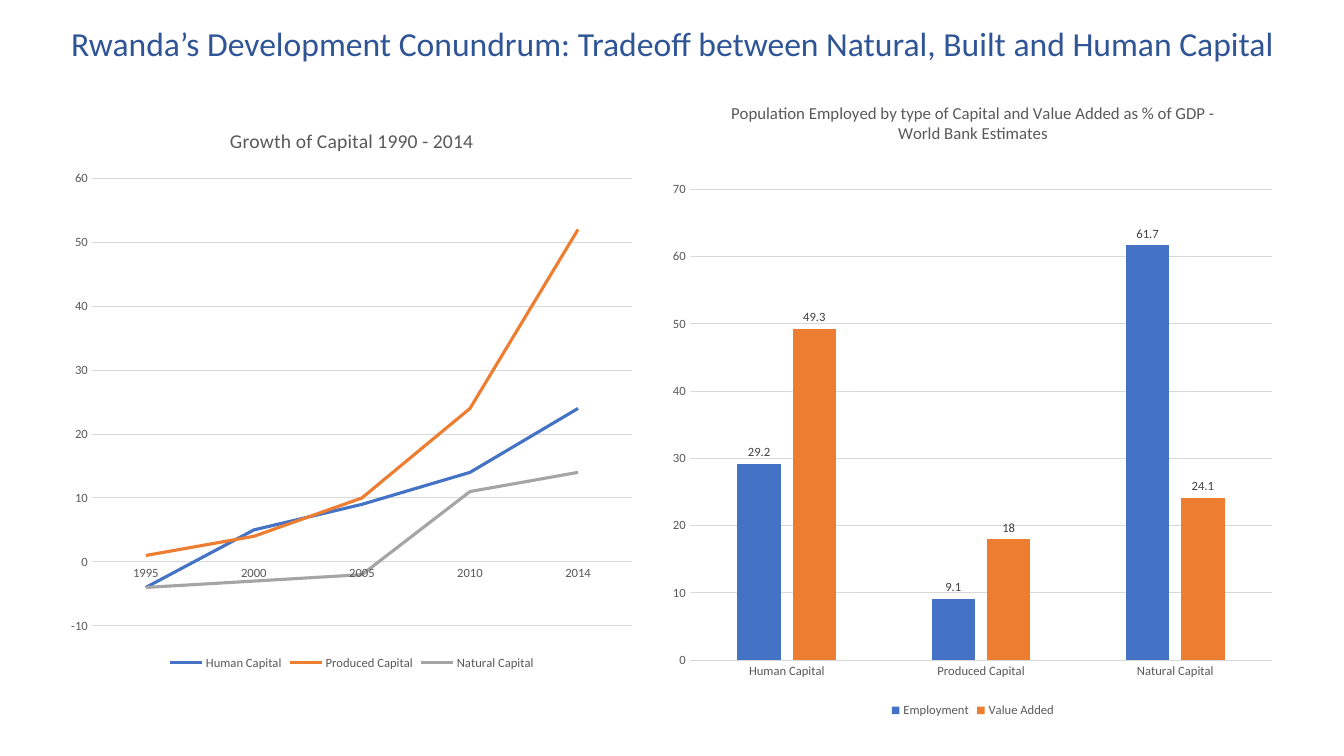
from dataclasses import dataclass

from lxml.etree import SubElement
from pptx import Presentation
from pptx.chart.data import CategoryChartData
from pptx.dml.color import RGBColor
from pptx.enum.chart import XL_CHART_TYPE, XL_LABEL_POSITION, XL_LEGEND_POSITION, XL_TICK_MARK
from pptx.enum.text import MSO_ANCHOR, MSO_AUTO_SIZE, PP_ALIGN
from pptx.oxml.ns import qn
from pptx.util import Pt

PX = 9144  # EMU per px, 100 px to the inch


@dataclass(frozen=True)
class Theme:
    font: str = "Calibri"
    heading: str = "2F5597"
    text: str = "595959"
    label: str = "404040"
    rule: str = "D9D9D9"
    series: tuple = ("4472C4", "ED7D31", "A5A5A5")
    heading_size: int = 24
    small_size: int = 9
    rule_width: float = 0.75
    curve_width: float = 2.25


class SlideBuilder:
    def __init__(self, slide, theme):
        self.slide = slide
        self.theme = theme

    def style_font(self, font, size, color):
        font.name = self.theme.font
        font.size = Pt(size)
        font.bold = False
        font.color.rgb = RGBColor.from_string(color)

    def style_line(self, line, color, width):
        line.color.rgb = RGBColor.from_string(color)
        line.width = Pt(width)

    def heading(self, text, left, top, width, height):
        title = self.slide.shapes.title
        title.left, title.top, title.width, title.height = (
            v * PX for v in (left, top, width, height))
        frame = title.text_frame
        frame.text = text
        frame.word_wrap = True
        frame.auto_size = MSO_AUTO_SIZE.NONE
        frame.vertical_anchor = MSO_ANCHOR.MIDDLE
        paragraph = frame.paragraphs[0]
        paragraph.alignment = PP_ALIGN.CENTER
        paragraph.line_spacing = 0.7
        self.style_font(paragraph.font, self.theme.heading_size, self.theme.heading)

    def chart(self, kind, title, title_size, box, plot_box, categories, series, scale):
        theme = self.theme
        data = CategoryChartData()
        data.categories = categories
        for name, values in series.items():
            data.add_series(name, values)
        chart = self.slide.shapes.add_chart(kind, *(v * PX for v in box), data).chart
        self.style_font(chart.font, theme.small_size, theme.text)

        # Title and legend
        chart.has_title = True
        chart.chart_title.include_in_layout = False
        chart.chart_title.text_frame.text = title
        self.style_font(chart.chart_title.text_frame.paragraphs[0].font, title_size, theme.text)
        chart.has_legend = True
        chart.legend.position = XL_LEGEND_POSITION.BOTTOM
        chart.legend.include_in_layout = False
        self.style_font(chart.legend.font, theme.small_size, theme.text)

        # Axes
        for axis in (chart.category_axis, chart.value_axis):
            axis.major_tick_mark = axis.minor_tick_mark = XL_TICK_MARK.NONE
            self.style_font(axis.tick_labels.font, theme.small_size, theme.text)
        self.style_line(chart.category_axis.format.line, theme.rule, theme.rule_width)
        values_axis = chart.value_axis
        values_axis.format.line.fill.background()
        values_axis.minimum_scale, values_axis.maximum_scale = scale
        values_axis.major_unit = 10
        self.style_line(values_axis.major_gridlines.format.line, theme.rule, theme.rule_width)

        chart.plots[0].vary_by_categories = False
        self.place_plot(chart, box, plot_box)
        return chart

    def place_plot(self, chart, box, plot_box):
        """Fix the inner plot area as fractions of the chart box."""
        area = chart.plots[0]._element.getparent()
        layout = area.find(qn("c:layout"))
        if layout is None:
            layout = SubElement(area, qn("c:layout"))
            area.insert(0, layout)
        manual = SubElement(layout, qn("c:manualLayout"))
        left, top, width, height = box
        x, y, w, h = plot_box
        settings = {
            "layoutTarget": "inner", "xMode": "edge", "yMode": "edge",
            "x": (x - left) / width, "y": (y - top) / height,
            "w": w / width, "h": h / height,
        }
        for tag, value in settings.items():
            SubElement(manual, qn(f"c:{tag}")).set("val", str(value))

    def line_chart(self, **content):
        chart = self.chart(XL_CHART_TYPE.LINE, **content)
        for curve, color in zip(chart.plots[0].series, self.theme.series):
            curve.smooth = False
            self.style_line(curve.format.line, color, self.theme.curve_width)

    def column_chart(self, **content):
        chart = self.chart(XL_CHART_TYPE.COLUMN_CLUSTERED, **content)
        plot = chart.plots[0]
        plot.gap_width = 219
        plot.overlap = -27
        for columns, color in zip(plot.series, self.theme.series):
            columns.format.fill.solid()
            columns.format.fill.fore_color.rgb = RGBColor.from_string(color)
            labels = columns.data_labels
            labels.show_value = True
            labels.position = XL_LABEL_POSITION.OUTSIDE_END
            self.style_font(labels.font, self.theme.small_size, self.theme.label)


def main():
    presentation = Presentation()
    presentation.slide_width = 1333 * PX
    presentation.slide_height = 750 * PX
    title_only = presentation.slide_layouts[5]
    builder = SlideBuilder(presentation.slides.add_slide(title_only), Theme())

    # Heading
    builder.heading(
        "Rwanda’s Development Conundrum: Tradeoff between Natural, Built and Human Capital",
        40, 13, 1254, 70)

    # Growth of each capital over time
    builder.line_chart(
        title="Growth of Capital 1990 - 2014",
        title_size=14,
        box=(59, 106, 580, 563),
        plot_box=(91, 177, 536, 444),
        categories=["1995", "2000", "2005", "2010", "2014"],
        series={
            "Human Capital": (-4, 5, 9, 14, 24),
            "Produced Capital": (1, 4, 10, 24, 52),
            "Natural Capital": (-4, -3, -2, 11, 14),
        },
        scale=(-10, 60),
    )

    # Employment against value added
    builder.column_chart(
        title="Population Employed by type of Capital and Value Added as % of GDP - "
              "World Bank Estimates",
        title_size=12,
        box=(655, 80, 620, 636),
        plot_box=(684, 188, 578, 467),
        categories=["Human Capital", "Produced Capital", "Natural Capital"],
        series={
            "Employment": (29.2, 9.1, 61.7),
            "Value Added": (49.3, 18, 24.1),
        },
        scale=(0, 70),
    )

    presentation.save("out.pptx")


if __name__ == "__main__":
    main()
